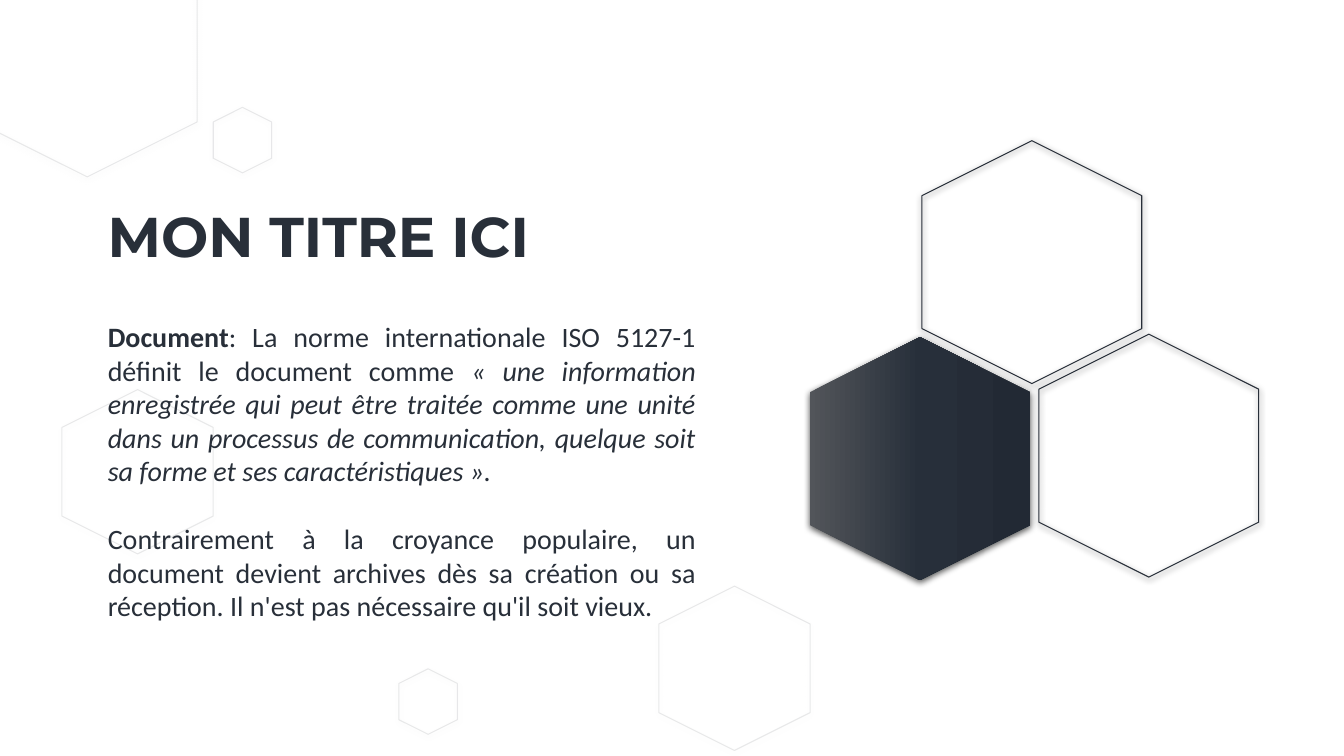
from dataclasses import dataclass

from lxml.etree import SubElement
from pptx import Presentation
from pptx.dml.color import RGBColor
from pptx.enum.shapes import MSO_AUTO_SHAPE_TYPE as ShapeType
from pptx.enum.text import MSO_AUTO_SIZE as AutoSize, PP_ALIGN as Align
from pptx.oxml.ns import qn
from pptx.util import Inches, Pt


@dataclass(frozen=True)
class Theme:
    ink: str = "282F39"
    shadow: str = "000000"
    gradient: tuple = ((0, "52555A"), (50, "272F3A"), (100, "222934"))
    title_font: str = "Montserrat"
    body_font: str = "Calibri"
    title_size: float = 40
    body_size: float = 20
    paragraph_gap: float = 24.4
    outline: float = 0.75
    faint: int = 9
    shadow_opacity: int = 63


THEME = Theme()
WIDTH, HEIGHT = Inches(13.33), Inches(7.5)
COLUMN, ROW = WIDTH / 100, HEIGHT / 100

LARGE, MEDIUM, SMALL = (32.13, 29.07), (21.73, 20), (8.67, 7.73)
OUTLINED = [(76.78, 34.67), (85.48, 60.27)]
FILLED = (68.45, 60.67)
BACKDROP = [
    (6.49, 7.33, LARGE),
    (54.65, 88.4, MEDIUM),
    (10.24, 62.4, MEDIUM),
    (18.04, 18.53, SMALL),
    (31.85, 92.8, SMALL),
]

TITLE = [[("MON TITRE ICI", {"bold": True})]]
BODY = [
    [
        ("Document", {"bold": True}),
        (": La norme internationale ISO 5127-1 définit le document comme ", {}),
        ("« une information enregistrée qui peut être traitée comme une unité "
         "dans un processus de communication, quelque soit sa forme et ses "
         "caractéristiques ».", {"italic": True}),
    ],
    [("Contrairement à la croyance populaire, un document devient archives dès "
      "sa création ou sa réception. Il n'est pas nécessaire qu'il soit vieux.", {})],
]


def apply_format(target, values):
    for name, value in values.items():
        setattr(target, name, value)


def add_color(parent, color, opacity=100):
    node = SubElement(parent, qn("a:srgbClr"), val=color)
    if opacity < 100:
        SubElement(node, qn("a:alpha"), val=str(opacity * 1000))


def add_shadow(shape):
    shape.shadow.inherit = False
    effects = shape.element.spPr.find(qn("a:effectLst"))
    outer = SubElement(
        effects, qn("a:outerShdw"), blurRad=str(Pt(4.5)), dist=str(Pt(1.5)),
        dir="5400000", algn="ctr", rotWithShape="0",
    )
    add_color(outer, THEME.shadow, THEME.shadow_opacity)


def fill_gradient(shape):
    shape.fill.gradient()
    shape.fill.gradient_angle = 270
    stops = next(shape.element.spPr.iter(qn("a:gsLst")))
    for stop in list(stops):
        stops.remove(stop)
    for position, color in THEME.gradient:
        add_color(SubElement(stops, qn("a:gs"), pos=str(position * 1000)), color)
    shape.line.fill.background()


def draw_outline(shape, opacity):
    shape.fill.background()
    shape.line.width = Pt(THEME.outline)
    shape.line.color.rgb = RGBColor.from_string(THEME.ink)
    if opacity < 100:
        color = next(shape.line._ln.iter(qn("a:srgbClr")))
        SubElement(color, qn("a:alpha"), val=str(opacity * 1000))


def add_hexagon(page, column, row, size, opacity=100, filled=False):
    width, height = (round(side * ROW) for side in size)
    left = round(column * COLUMN - width / 2)
    top = round(row * ROW - height / 2)
    shape = page.shapes.add_shape(ShapeType.HEXAGON, left, top, width, height)
    shape.rotation = 270
    if filled:
        fill_gradient(shape)
    else:
        draw_outline(shape, opacity)
    add_shadow(shape)


def add_text(page, column, row, columns, rows, paragraphs, font, size, align):
    box = page.shapes.add_textbox(
        round(column * COLUMN), round(row * ROW),
        round(columns * COLUMN), round(rows * ROW),
    )
    frame = box.text_frame
    apply_format(frame, {"word_wrap": True, "auto_size": AutoSize.SHAPE_TO_FIT_TEXT})
    for index, spans in enumerate(paragraphs):
        para = frame.add_paragraph() if index else frame.paragraphs[0]
        gap = Pt(THEME.paragraph_gap if index else 0)
        apply_format(para, {"alignment": align, "space_before": gap})
        for text, emphasis in spans:
            span = para.add_run()
            span.text = text
            apply_format(span.font, {"name": font, "size": Pt(size), **emphasis})
            span.font.color.rgb = RGBColor.from_string(THEME.ink)


def main():
    deck = Presentation()
    apply_format(deck, {"slide_width": WIDTH, "slide_height": HEIGHT})
    page = deck.slides.add_slide(deck.slide_layouts[6])
    for column, row in OUTLINED:
        add_hexagon(page, column, row, LARGE)
    add_hexagon(page, *FILLED, LARGE, filled=True)
    add_text(page, 7.28, 41.6, 45.24, 41.73, BODY,
             THEME.body_font, THEME.body_size, Align.JUSTIFY)
    add_text(page, 7.28, 26, 37.28, 10.27, TITLE,
             THEME.title_font, THEME.title_size, Align.LEFT)
    for column, row, size in BACKDROP:
        add_hexagon(page, column, row, size, opacity=THEME.faint)
    deck.save("out.pptx")


if __name__ == "__main__":
    main()
